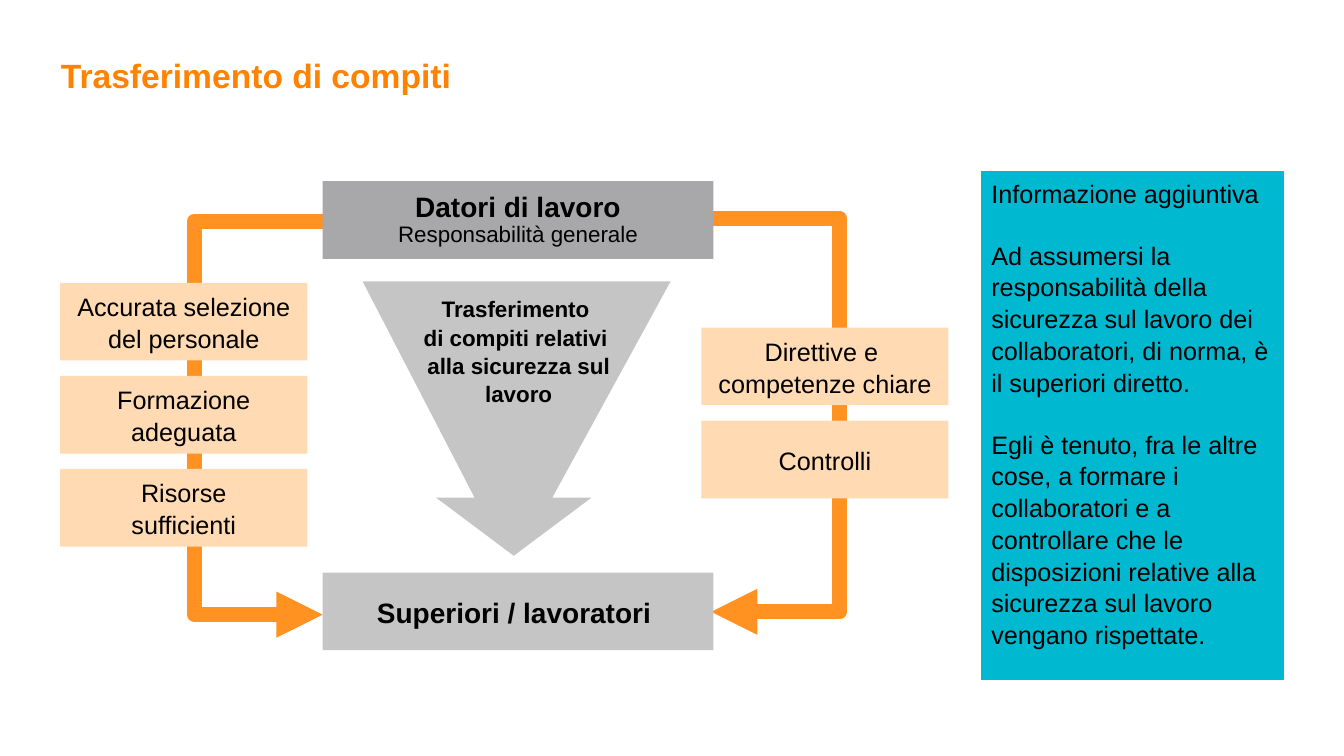
from lxml.etree import SubElement as Sub
from pptx import Presentation
from pptx.dml.color import RGBColor as Rgb
from pptx.enum.shapes import MSO_CONNECTOR as Conn, MSO_SHAPE as Kind
from pptx.enum.text import MSO_ANCHOR as Anchor, PP_ALIGN as Align
from pptx.oxml.ns import qn
from pptx.util import Pt

hues = {
    "title": "FF8200", "line": "FF9220", "text": "000000", "dark": "A8A8AA",
    "gray": "C5C5C6", "peach": "FFDAB3", "info": "00B8CF",
}

deck = Presentation()
deck.slide_width, deck.slide_height = Pt(960), Pt(540)
slide = deck.slides.add_slide(deck.slide_layouts[6])
shapes = slide.shapes


def put(text, box, fill=None, size=18, bold=False, color="text", align=Align.CENTER,
        anchor=Anchor.MIDDLE, pads=(0, 0, 0, 0), lead=1.05, gap=0):
    area = [Pt(v) for v in box]
    if fill:
        shape = shapes.add_shape(Kind.RECTANGLE, *area)
        shape.shadow.inherit = False
        shape.fill.solid()
        shape.fill.fore_color.rgb = Rgb.from_string(hues[fill])
        shape.line.fill.background()
    else:
        shape = shapes.add_textbox(*area)
    frame = shape.text_frame
    frame.word_wrap = True
    frame.vertical_anchor = anchor
    frame.margin_left, frame.margin_top, frame.margin_right, frame.margin_bottom = map(Pt, pads)
    frame.text = text
    for i, para in enumerate(frame.paragraphs):
        para.alignment = align
        para.line_spacing = lead
        para.space_before = Pt(gap if i else 0)
        font = para.font
        font.name, font.size, font.bold = "Arial", Pt(size), bold
        font.color.rgb = Rgb.from_string(hues[color])
    return shape


put("Trasferimento di compiti", (43.5, 37.5, 873, 67.5), size=24, bold=True,
    color="title", align=Align.LEFT, anchor=Anchor.TOP)

for start, end, top, turn in ((232.5, 230.5, 158, 139.5), (506, 508, 156, 599)):
    link = shapes.add_connector(Conn.ELBOW, Pt(start), Pt(top), Pt(end), Pt(top + 281))
    link.line.width = Pt(11)
    link.line.color.rgb = Rgb.from_string(hues["line"])
    props = link._element.spPr
    bends = props.find(qn("a:prstGeom")).find(qn("a:avLst"))
    ratio = round((turn - start) / (end - start) * 100000)
    Sub(bends, qn("a:gd"), name="adj1", fmla=f"val {ratio}")
    Sub(props.find(qn("a:ln")), qn("a:tailEnd"), type="triangle")
    Sub(props, qn("a:effectLst"))

edge = [(479, 201), (394.5, 355.5), (422.5, 355.5), (367, 397), (311.5, 355.5), (339, 355.5)]
pen = shapes.build_freeform(Pt(259), Pt(201))
pen.add_line_segments([(Pt(x), Pt(y)) for x, y in edge], close=True)
arrow = pen.convert_to_shape()
arrow.shadow.inherit = False
arrow.fill.solid()
arrow.fill.fore_color.rgb = Rgb.from_string(hues["gray"])
arrow.line.fill.background()
put("Trasferimento \vdi compiti relativi \valla sicurezza sul lavoro",
    (287.5, 211.5, 166, 81), size=16, bold=True, pads=(0, 0, 0, 3))

boss = put("Datori di lavoro\nResponsabilità generale", (230.5, 129.5, 279, 55.5),
           fill="dark", size=20, bold=True, lead=0.9)
role = boss.text_frame.paragraphs[1].font
role.size, role.bold = Pt(16), False
put("Superiori / lavoratori ", (230.5, 409, 279, 55.5), fill="gray", size=20, bold=True)

sides = [
    (43, 202, ["Accurata selezione del personale", "Formazione\nadeguata", "Risorse\nsufficienti"]),
    (501, 234, ["Direttive e \ncompetenze chiare", "Controlli"]),
]
for left, top, names in sides:
    for i, name in enumerate(names):
        put(name, (left, top + i * 66.5, 176.5, 55.5), fill="peach")

info = put("Informazione aggiuntiva\n"
           "Ad assumersi la responsabilità della sicurezza sul lavoro dei collaboratori, "
           "di norma, è il superiori diretto.\n"
           "Egli è tenuto, fra le altre cose, a formare i collaboratori e a controllare che "
           "le disposizioni relative alla sicurezza sul lavoro vengano rispettate.",
           (701, 122.5, 215.5, 363), fill="info", align=Align.LEFT, anchor=Anchor.TOP,
           pads=(7.2, 3.6, 7.2, 3.6), gap=21.6)
info.line.color.rgb = Rgb.from_string(hues["info"])
info.line.width = Pt(1)

deck.save("out.pptx")
